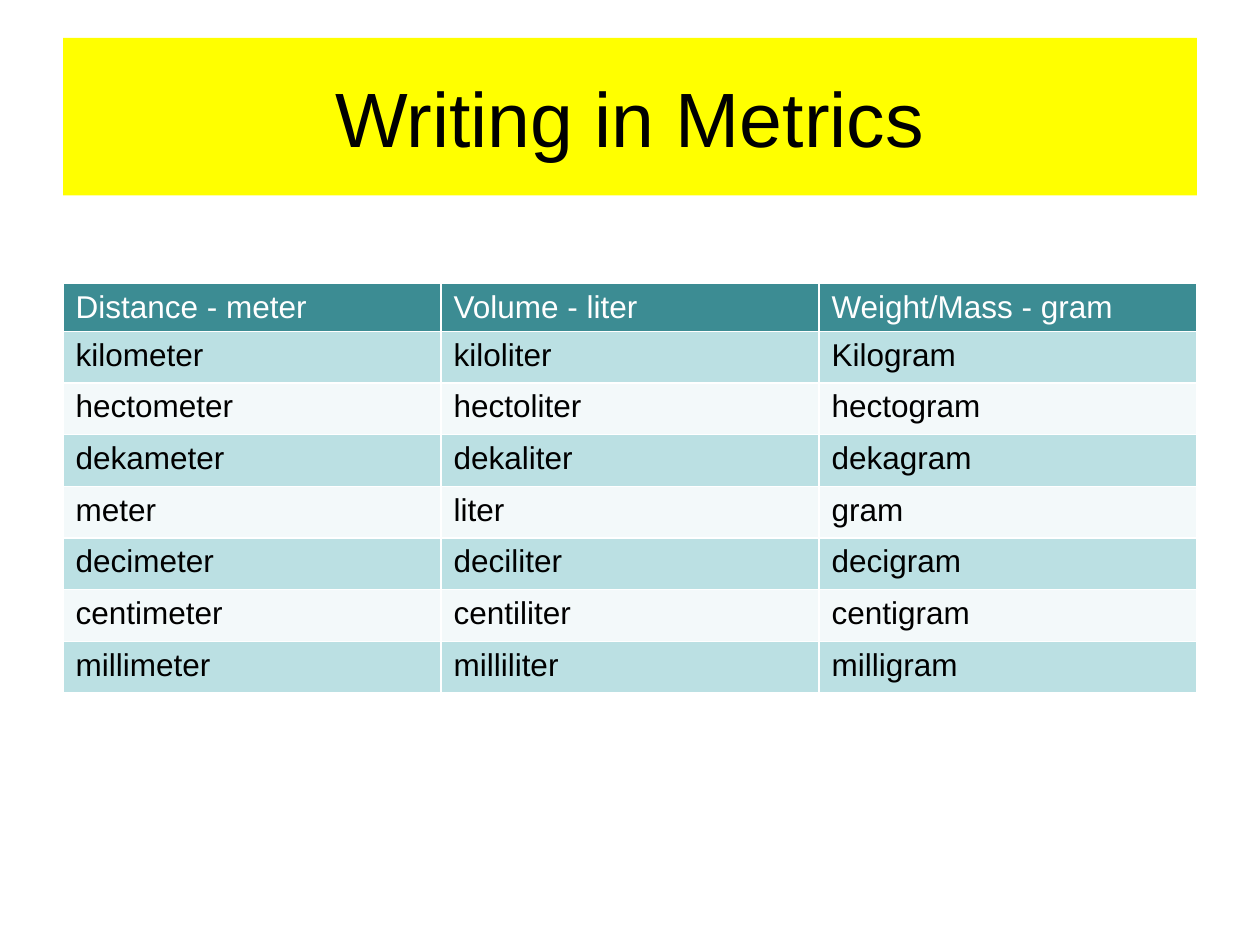
from pptx import Presentation
from pptx.dml.color import RGBColor
from pptx.enum.text import MSO_ANCHOR, PP_ALIGN
from pptx.util import Inches, Pt

TITLE = "Writing in Metrics"
ROWS = [
    ("Distance - meter", "Volume - liter", "Weight/Mass - gram"),
    ("kilometer", "kiloliter", "Kilogram"),
    ("hectometer", "hectoliter", "hectogram"),
    ("dekameter", "dekaliter", "dekagram"),
    ("meter", "liter", "gram"),
    ("decimeter", "deciliter", "decigram"),
    ("centimeter", "centiliter", "centigram"),
    ("millimeter", "milliliter", "milligram"),
]
LEFT, WIDTH = 0.5, 9
HEADER_H, ROW_H = 0.27, 0.41
HEADER_FILL, BANDS = "3C8C93", ("F3F9FA", "BBE0E3")


def paint(fill, color):
    fill.solid()
    fill.fore_color.rgb = RGBColor.from_string(color)


def style(p, size, color):
    p.font.name = "Arial"
    p.font.size = Pt(size)
    p.font.bold = False
    p.font.color.rgb = RGBColor.from_string(color)


def add_title(s):
    title = s.shapes.title
    title.left, title.top = Inches(LEFT), Inches(0.3)
    title.width, title.height = Inches(WIDTH), Inches(1.25)
    paint(title.fill, "FFFF00")
    tf = title.text_frame
    tf.text = TITLE
    tf.vertical_anchor = MSO_ANCHOR.MIDDLE
    p = tf.paragraphs[0]
    p.alignment = PP_ALIGN.CENTER
    style(p, 44, "000000")


def add_units(s):
    height = HEADER_H + ROW_H * (len(ROWS) - 1)
    table = s.shapes.add_table(
        len(ROWS), len(ROWS[0]),
        Inches(LEFT), Inches(2.25), Inches(WIDTH), Inches(height),
    ).table
    for i, row in enumerate(ROWS):
        header = i == 0
        table.rows[i].height = Inches(HEADER_H if header else ROW_H)
        for j, text in enumerate(row):
            cell = table.cell(i, j)
            cell.text = text
            paint(cell.fill, HEADER_FILL if header else BANDS[i % 2])
            style(cell.text_frame.paragraphs[0], 18, "FFFFFF" if header else "000000")


def main():
    prs = Presentation()
    prs.slide_width, prs.slide_height = Inches(10), Inches(7.5)
    s = prs.slides.add_slide(prs.slide_layouts[5])
    add_title(s)
    add_units(s)
    prs.save("out.pptx")


if __name__ == "__main__":
    main()
